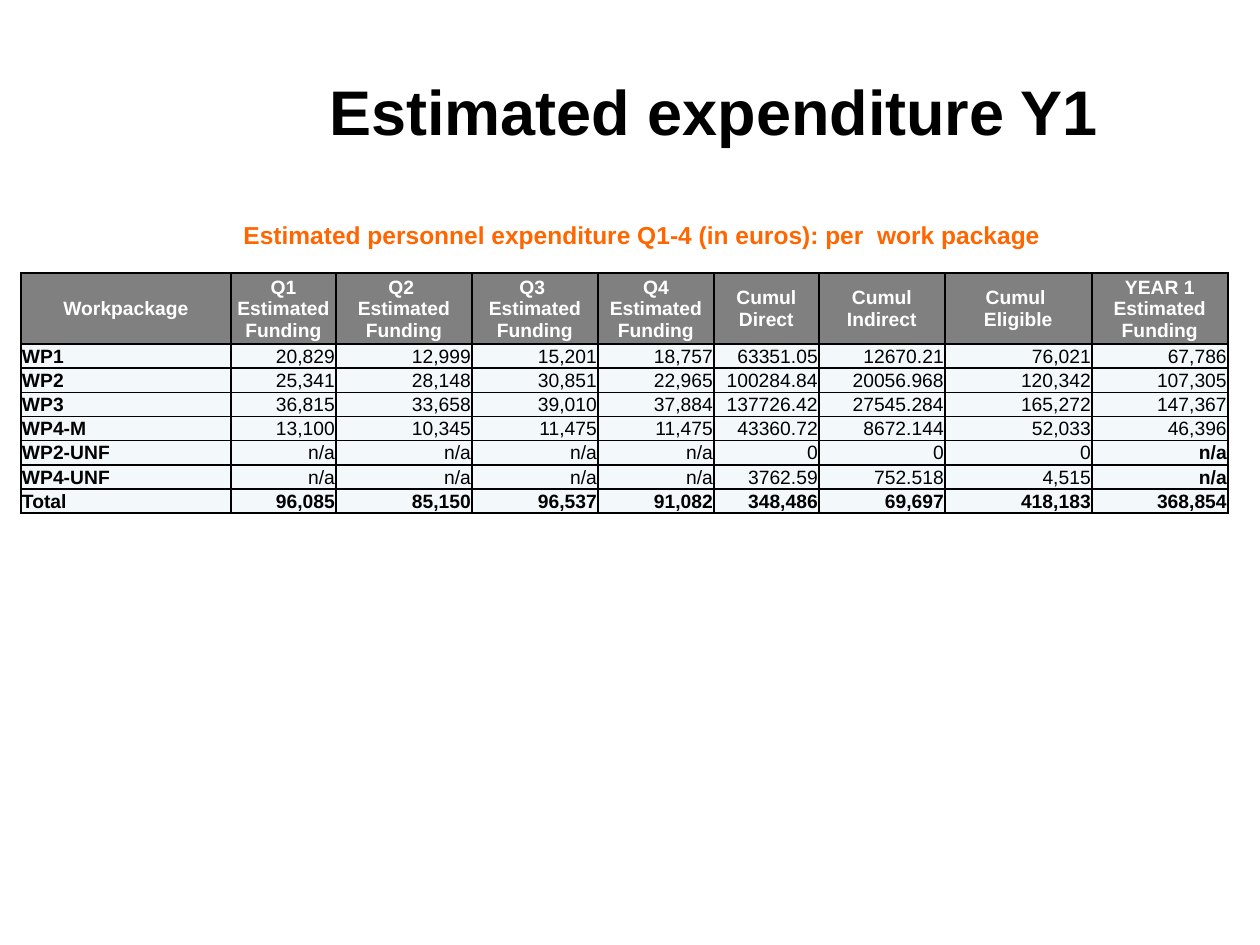
from dataclasses import dataclass

from lxml import etree
from pptx import Presentation
from pptx.dml.color import RGBColor
from pptx.enum.text import MSO_ANCHOR, PP_ALIGN
from pptx.oxml.ns import qn
from pptx.util import Pt

LEFT, CENTER, RIGHT = PP_ALIGN.LEFT, PP_ALIGN.CENTER, PP_ALIGN.RIGHT
TOP, MIDDLE = MSO_ANCHOR.TOP, MSO_ANCHOR.MIDDLE

EMU_PER_PX = 914400 / 126
FONT = "Arial"
COLORS = {
    "ink": "000000",
    "accent": "FF6600",
    "header": "808080",
    "header_text": "FFFFFF",
    "body": "F3F9FA",
}

# Table content: "\n" starts a paragraph, "\v" breaks a line
HEADERS = [
    "Workpackage", "Q1 Estimated\nFunding", "Q2 \vEstimated\nFunding",
    "Q3 \vEstimated\nFunding", "Q4 Estimated\nFunding", "Cumul Direct",
    "Cumul Indirect", "Cumul \vEligible", "YEAR 1 Estimated\nFunding",
]
WORK_PACKAGES = [
    ["WP1", "20,829", "12,999", "15,201", "18,757", "63351.05", "12670.21", "76,021", "67,786"],
    ["WP2", "25,341", "28,148", "30,851", "22,965", "100284.84", "20056.968", "120,342", "107,305"],
    ["WP3", "36,815", "33,658", "39,010", "37,884", "137726.42", "27545.284", "165,272", "147,367"],
    ["WP4-M", "13,100", "10,345", "11,475", "11,475", "43360.72", "8672.144", "52,033", "46,396"],
    ["WP2-UNF", "n/a", "n/a", "n/a", "n/a", "0", "0", "0", "n/a"],
    ["WP4-UNF", "n/a", "n/a", "n/a", "n/a", "3762.59", "752.518", "4,515", "n/a"],
    ["Total", "96,085", "85,150", "96,537", "91,082", "348,486", "69,697", "418,183", "368,854"],
]
COLUMN_WIDTHS = [210, 105, 136, 126, 116, 105, 126, 147, 136]
HEADER_HEIGHT, ROW_HEIGHT = 71, 24


@dataclass
class TextStyle:
    size: int
    color: str
    bold: bool = True
    align: PP_ALIGN = LEFT


@dataclass
class Heading:
    text: str
    left: int
    top: int
    width: int
    height: int
    anchor: MSO_ANCHOR
    style: TextStyle


HEADINGS = [
    Heading("Estimated expenditure Y1", 147, 31, 1134, 158, MIDDLE,
            TextStyle(36, "ink", align=CENTER)),
    Heading("Estimated personnel expenditure Q1-4 (in euros): per  work package",
            231, 214, 840, 43, TOP, TextStyle(14, "accent")),
]


def px(length: int) -> int:
    return round(length * EMU_PER_PX)


def rgb(name: str) -> RGBColor:
    return RGBColor.from_string(COLORS[name])


def write_text(text_frame, text: str, style: TextStyle) -> None:
    text_frame.text = text
    text_frame.word_wrap = True
    for paragraph in text_frame.paragraphs:
        paragraph.alignment = style.align
        paragraph.font.name = FONT
        paragraph.font.size = Pt(style.size)
        paragraph.font.bold = style.bold
        paragraph.font.color.rgb = rgb(style.color)


def add_heading(slide, heading: Heading) -> None:
    shape = slide.shapes.add_textbox(
        px(heading.left), px(heading.top), px(heading.width), px(heading.height))
    shape.text_frame.vertical_anchor = heading.anchor
    write_text(shape.text_frame, heading.text, heading.style)


def add_borders(cell) -> None:
    properties = cell._tc.get_or_add_tcPr()
    for side in ("a:lnL", "a:lnR", "a:lnT", "a:lnB"):
        line = etree.SubElement(properties, qn(side), w=str(Pt(1)))
        fill = etree.SubElement(line, qn("a:solidFill"))
        etree.SubElement(fill, qn("a:srgbClr"), val=COLORS["ink"])


def format_cell(cell, text: str, fill: str, style: TextStyle) -> None:
    cell.margin_left = cell.margin_right = cell.margin_top = px(1)
    cell.margin_bottom = 0
    cell.vertical_anchor = MIDDLE
    add_borders(cell)
    cell.fill.solid()
    cell.fill.fore_color.rgb = rgb(fill)
    write_text(cell.text_frame, text, style)


def body_style(row: list[str], column: int) -> TextStyle:
    is_label = column == 0
    is_missing_total = column == len(row) - 1 and row[column] == "n/a"
    bold = is_label or is_missing_total or row[0] == "Total"
    return TextStyle(11, "ink", bold, LEFT if is_label else RIGHT)


def add_expenditure_table(slide, left: int, top: int) -> None:
    heights = [HEADER_HEIGHT] + [ROW_HEIGHT] * len(WORK_PACKAGES)
    table = slide.shapes.add_table(
        len(heights), len(COLUMN_WIDTHS), px(left), px(top),
        px(sum(COLUMN_WIDTHS)), px(sum(heights))).table
    for column, width in zip(table.columns, COLUMN_WIDTHS):
        column.width = px(width)
    for row, height in zip(table.rows, heights):
        row.height = px(height)

    # Header row
    header_style = TextStyle(11, "header_text", align=CENTER)
    for column, text in enumerate(HEADERS):
        format_cell(table.cell(0, column), text, "header", header_style)

    # Work packages and total
    for index, values in enumerate(WORK_PACKAGES, start=1):
        for column, text in enumerate(values):
            format_cell(table.cell(index, column), text, "body", body_style(values, column))


def main() -> None:
    presentation = Presentation()
    presentation.slide_width, presentation.slide_height = px(1260), px(945)
    slide = presentation.slides.add_slide(presentation.slide_layouts[6])
    for heading in HEADINGS:
        add_heading(slide, heading)
    add_expenditure_table(slide, left=21, top=273)
    presentation.save("out.pptx")


if __name__ == "__main__":
    main()
